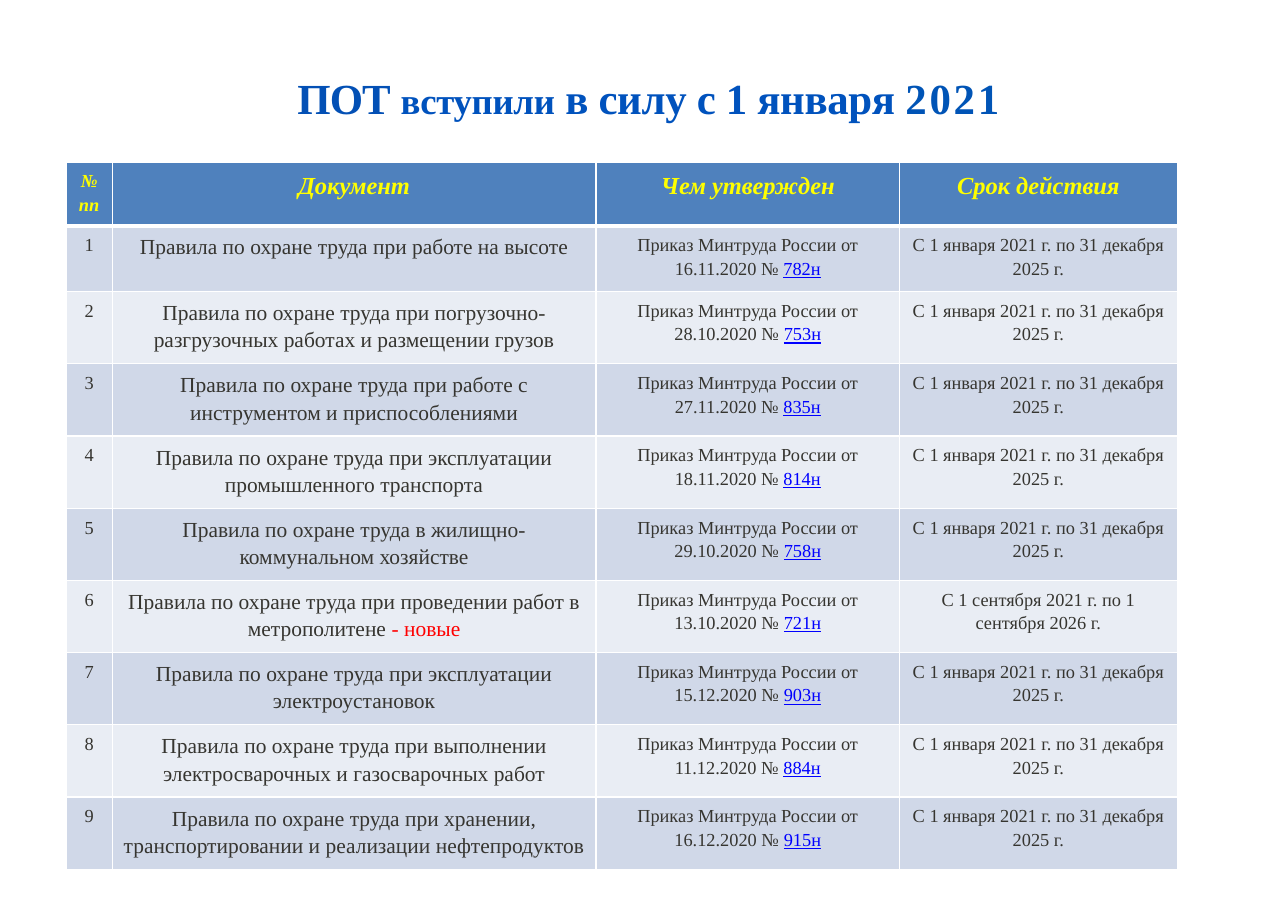
from lxml import etree
from pptx import Presentation
from pptx.dml.color import RGBColor
from pptx.enum import text
from pptx.oxml import ns
from pptx.util import Pt

WHITE = RGBColor(0xFF, 0xFF, 0xFF)
HEADER_BLUE = RGBColor(0x4F, 0x81, 0xBD)
BAND_DARK = RGBColor(0xD0, 0xD8, 0xE8)
BAND_LIGHT = RGBColor(0xE9, 0xED, 0xF4)
YELLOW = RGBColor(0xFF, 0xFF, 0x00)
INK = RGBColor(0x36, 0x35, 0x30)
LINK_BLUE = RGBColor(0x00, 0x00, 0xFF)
RED = RGBColor(0xFF, 0x00, 0x00)
TITLE_FIRST = RGBColor(0x03, 0x50, 0xB5)
TITLE_MIDDLE = RGBColor(0x00, 0x52, 0xBD)
TITLE_YEAR = RGBColor(0x00, 0x54, 0xB6)

COLUMN_WIDTHS = (30.2, 316.1, 198.4, 181.4)
HEADINGS = (("№ пп", 12), ("Документ", 16), ("Чем утвержден", 16), ("Срок действия", 16))
USUAL_TERM = "С 1 января 2021 г. по 31 декабря 2025 г."
METRO_TERM = "С 1 сентября 2021 г. по 1 сентября 2026 г."
RULES = (
    ("при работе на высоте", "", "16.11.2020", "782н", USUAL_TERM),
    ("при погрузочно-разгрузочных работах и размещении грузов", "", "28.10.2020", "753н", USUAL_TERM),
    ("при работе с инструментом и приспособлениями", "", "27.11.2020", "835н", USUAL_TERM),
    ("при эксплуатации промышленного транспорта", "", "18.11.2020", "814н", USUAL_TERM),
    ("в жилищно-коммунальном хозяйстве", "", "29.10.2020", "758н", USUAL_TERM),
    ("при проведении работ в метрополитене ", "- новые", "13.10.2020", "721н", METRO_TERM),
    ("при эксплуатации электроустановок", "", "15.12.2020", "903н", USUAL_TERM),
    ("при выполнении электросварочных и газосварочных работ", "", "11.12.2020", "884н", USUAL_TERM),
    ("при хранении, транспортировании и реализации нефтепродуктов", "", "16.12.2020", "915н", USUAL_TERM),
)
ROW_HEIGHTS = [40.5, 43] + [46.5] * (len(RULES) - 1)


class RulesPage:
    font_name = "Times New Roman"
    cell_margin = 4.3

    def __init__(self, deck):
        self.page = deck.slides.add_slide(deck.slide_layouts[6])

    def add_span(self, para, words, size, color, bold=False, italic=False, underline=False, spacing=0):
        span = para.add_run()
        span.text = words
        font = span.font
        font.name = self.font_name
        font.size = Pt(size)
        font.color.rgb = color
        font.bold, font.italic, font.underline = bold, italic, underline
        if spacing:
            span._r.get_or_add_rPr().set("spc", str(round(spacing * 100)))

    def add_title(self, left, top, width, height, spans):
        box = self.page.shapes.add_textbox(Pt(left), Pt(top), Pt(width), Pt(height))
        frame = box.text_frame
        frame.word_wrap = True
        frame.margin_left = frame.margin_right = 0
        frame.margin_top, frame.margin_bottom = Pt(7), Pt(2)
        para = frame.paragraphs[0]
        para.alignment = text.PP_ALIGN.CENTER
        for words, size, color, spacing in spans:
            self.add_span(para, words, size, color, bold=True, spacing=spacing)

    def add_table(self, left, top, widths, heights):
        table = self.page.shapes.add_table(
            len(heights), len(widths), Pt(left), Pt(top), Pt(sum(widths)), Pt(sum(heights))
        ).table
        table.first_row = table.horz_banding = False
        for column, width in zip(table.columns, widths):
            column.width = Pt(width)
        for row, height in zip(table.rows, heights):
            row.height = Pt(height)
        return table

    def fill_cell(self, cell, fill, spans, top_line=1, bottom_line=1, **style):
        cell.fill.solid()
        cell.fill.fore_color.rgb = fill
        cell.margin_left = cell.margin_right = Pt(self.cell_margin)
        cell.margin_top = cell.margin_bottom = Pt(self.cell_margin)
        cell.vertical_anchor = text.MSO_ANCHOR.TOP
        self.add_borders(cell, {"lnL": 1, "lnR": 1, "lnT": top_line, "lnB": bottom_line})
        para = cell.text_frame.paragraphs[0]
        para.alignment = text.PP_ALIGN.CENTER
        para.line_spacing = 1.15
        for words, size, color in spans:
            self.add_span(para, words, size, color, underline=color == LINK_BLUE, **style)

    def add_borders(self, cell, line_widths):
        properties = cell._tc.get_or_add_tcPr()
        for position, (side, width) in enumerate(line_widths.items()):
            line = etree.Element(ns.qn("a:" + side), w=str(Pt(width)))
            solid = etree.SubElement(line, ns.qn("a:solidFill"))
            etree.SubElement(solid, ns.qn("a:srgbClr"), val=str(WHITE))
            properties.insert(position, line)


def main():
    deck = Presentation()
    deck.slide_width, deck.slide_height = Pt(841.68), Pt(594.72)
    rules_page = RulesPage(deck)
    rules_page.add_title(126.7, 39.6, 594, 41, (
        ("ПОТ ", 28, TITLE_FIRST, -0.6),
        ("вступили", 24, TITLE_MIDDLE, -0.2),
        (" в силу с 1 января ", 28, TITLE_MIDDLE, -0.2),
        ("2021", 28, TITLE_YEAR, 1.8),
    ))
    table = rules_page.add_table(43.2, 105.84, COLUMN_WIDTHS, ROW_HEIGHTS)
    for column, (heading, size) in enumerate(HEADINGS):
        rules_page.fill_cell(table.cell(0, column), HEADER_BLUE, [(heading, size, YELLOW)],
                             bottom_line=3, bold=True, italic=True)
    for number, (subject, note, date, order, term) in enumerate(RULES, 1):
        document = [("Правила по охране труда " + subject, 14, INK)]
        if note:
            document.append((note, 14, RED))
        approval = [(f"Приказ Минтруда России от {date} № ", 12, INK), (order, 12, LINK_BLUE)]
        cells = ([(str(number), 12, INK)], document, approval, [(term, 12, INK)])
        band = BAND_DARK if number % 2 else BAND_LIGHT
        for column, spans in enumerate(cells):
            rules_page.fill_cell(table.cell(number, column), band, spans,
                                 top_line=3 if number == 1 else 1)
    deck.save("out.pptx")


if __name__ == "__main__":
    main()
